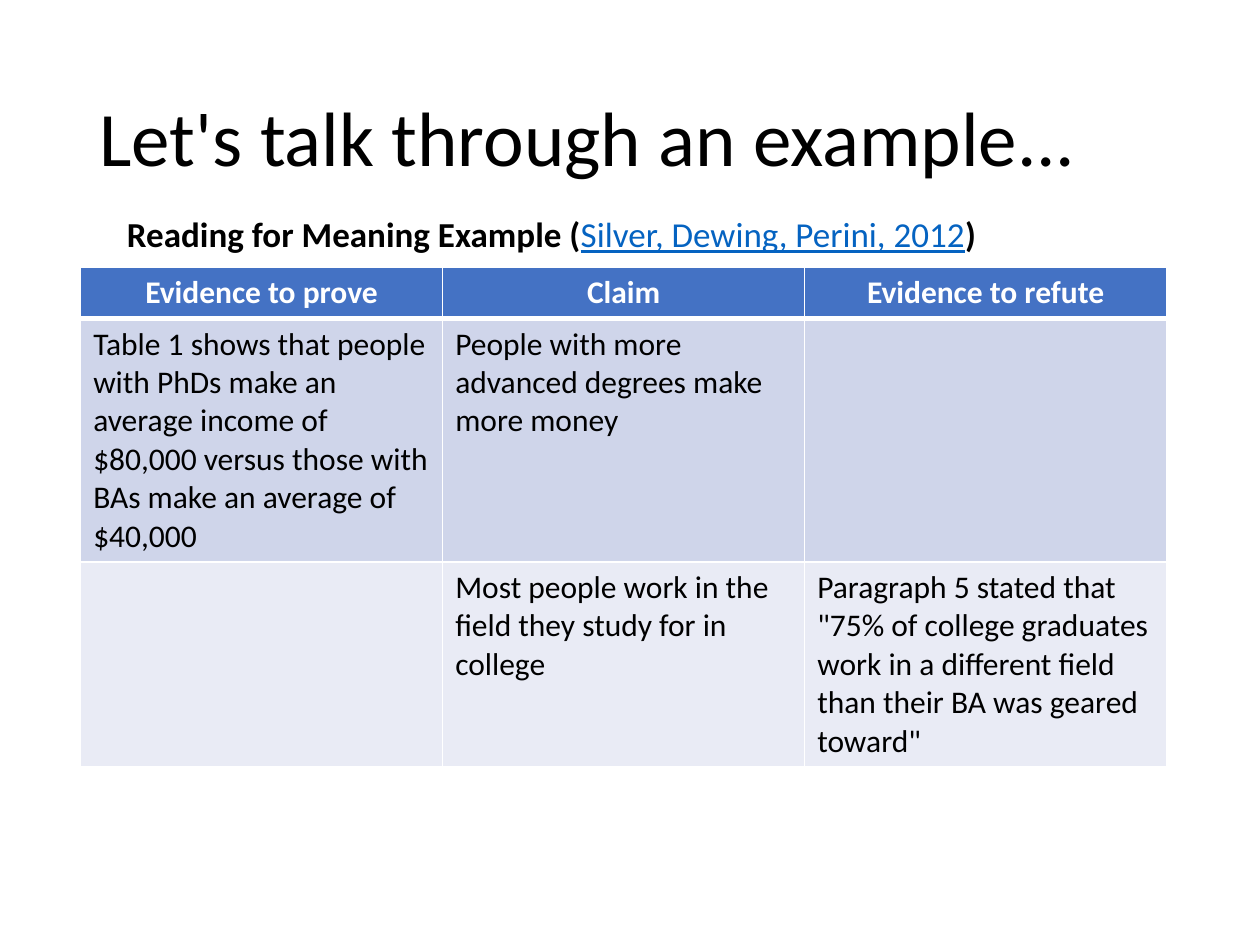
from lxml import etree
from pptx import Presentation
from pptx.dml.color import RGBColor
from pptx.enum.text import MSO_ANCHOR, MSO_AUTO_SIZE, PP_ALIGN
from pptx.oxml.ns import qn
from pptx.util import Inches, Pt

LEFT, CENTER = PP_ALIGN.LEFT, PP_ALIGN.CENTER
TOP, MIDDLE = MSO_ANCHOR.TOP, MSO_ANCHOR.MIDDLE
GROW = MSO_AUTO_SIZE.SHAPE_TO_FIT_TEXT

BLACK = RGBColor(0x00, 0x00, 0x00)
WHITE = RGBColor(0xFF, 0xFF, 0xFF)
LINK_BLUE = RGBColor(0x05, 0x63, 0xC1)
HEADER_BLUE = RGBColor(0x44, 0x72, 0xC4)
BAND_DARK = RGBColor(0xCF, 0xD5, 0xEA)
BAND_LIGHT = RGBColor(0xE9, 0xEB, 0xF5)

ROWS = [
    ["Evidence to prove", "Claim", "Evidence to refute"],
    [
        "Table 1 shows that people with PhDs make an average income of "
        "$80,000 versus those with BAs make an average of $40,000",
        "People with more advanced degrees make more money",
        "",
    ],
    [
        "",
        "Most people work in the field they study for in college",
        'Paragraph 5 stated that "75% of college graduates work in a '
        'different field than their BA was geared toward"',
    ],
]
ROW_HEIGHTS = [0.41, 1.9, 1.6]
ROW_FILLS = [HEADER_BLUE, BAND_DARK, BAND_LIGHT]


def add_span(para, text, size=18, color=BLACK, bold=False, underline=False, font="Calibri"):
    span = para.add_run()
    span.text = text
    span.font.name = font
    span.font.size = Pt(size)
    span.font.color.rgb = color
    span.font.bold = bold
    span.font.underline = underline


def add_border(cell, side, width, color=WHITE):
    properties = cell._tc.get_or_add_tcPr()
    line = etree.SubElement(properties, qn(f"a:ln{side}"), w=str(Pt(width)))
    fill = etree.SubElement(line, qn("a:solidFill"))
    etree.SubElement(fill, qn("a:srgbClr"), val=str(color))


class SlideBuilder:
    def __init__(self, deck):
        self.page = deck.slides.add_slide(deck.slide_layouts[5])

    def title(self, text, left, top, width, height):
        box = self.page.shapes.title
        box.left, box.top = Inches(left), Inches(top)
        box.width, box.height = Inches(width), Inches(height)
        frame = box.text_frame
        frame.word_wrap = True
        frame.vertical_anchor = MIDDLE
        para = frame.paragraphs[0]
        para.alignment = LEFT
        para.line_spacing = 0.9
        add_span(para, text, size=44)

    def caption(self, spans, left, top, width, height):
        box = self.page.shapes.add_textbox(
            Inches(left), Inches(top), Inches(width), Inches(height))
        frame = box.text_frame
        frame.word_wrap = True
        frame.auto_size = GROW
        for text, style in spans:
            add_span(frame.paragraphs[0], text, size=20, **style)

    def table(self, rows, heights, fills, left, top, width):
        frame = self.page.shapes.add_table(
            len(rows), len(rows[0]), Inches(left), Inches(top),
            Inches(width), Inches(sum(heights)))
        table = frame.table
        for index, (texts, height, fill) in enumerate(zip(rows, heights, fills)):
            table.rows[index].height = Inches(height)
            for column, text in enumerate(texts):
                self.cell(table.cell(index, column), text, fill, index)

    def cell(self, cell, text, fill, row):
        header = row == 0
        widths = {"L": 1, "R": 1, "T": 3 if row == 1 else 1, "B": 3 if header else 1}
        for side, width in widths.items():
            add_border(cell, side, width)
        cell.fill.solid()
        cell.fill.fore_color.rgb = fill
        cell.vertical_anchor = TOP
        if text:
            para = cell.text_frame.paragraphs[0]
            para.alignment = CENTER if header else LEFT
            add_span(para, text, color=WHITE if header else BLACK, bold=header)


def main():
    deck = Presentation()
    deck.slide_width, deck.slide_height = Inches(10), Inches(7.5)
    builder = SlideBuilder(deck)
    builder.title("Let's talk through an example...", 0.69, 0.4, 8.62, 1.45)
    builder.table(ROWS, ROW_HEIGHTS, ROW_FILLS, 0.64, 2.12, 8.62)
    builder.caption(
        [
            ("Reading for Meaning Example (", {"bold": True}),
            ("Silver, Dewing, Perini, 2012", {"color": LINK_BLUE, "underline": True}),
            (")", {"bold": True}),
        ],
        0.91, 1.64, 8.3, 0.44)
    deck.save("out.pptx")


if __name__ == "__main__":
    main()
